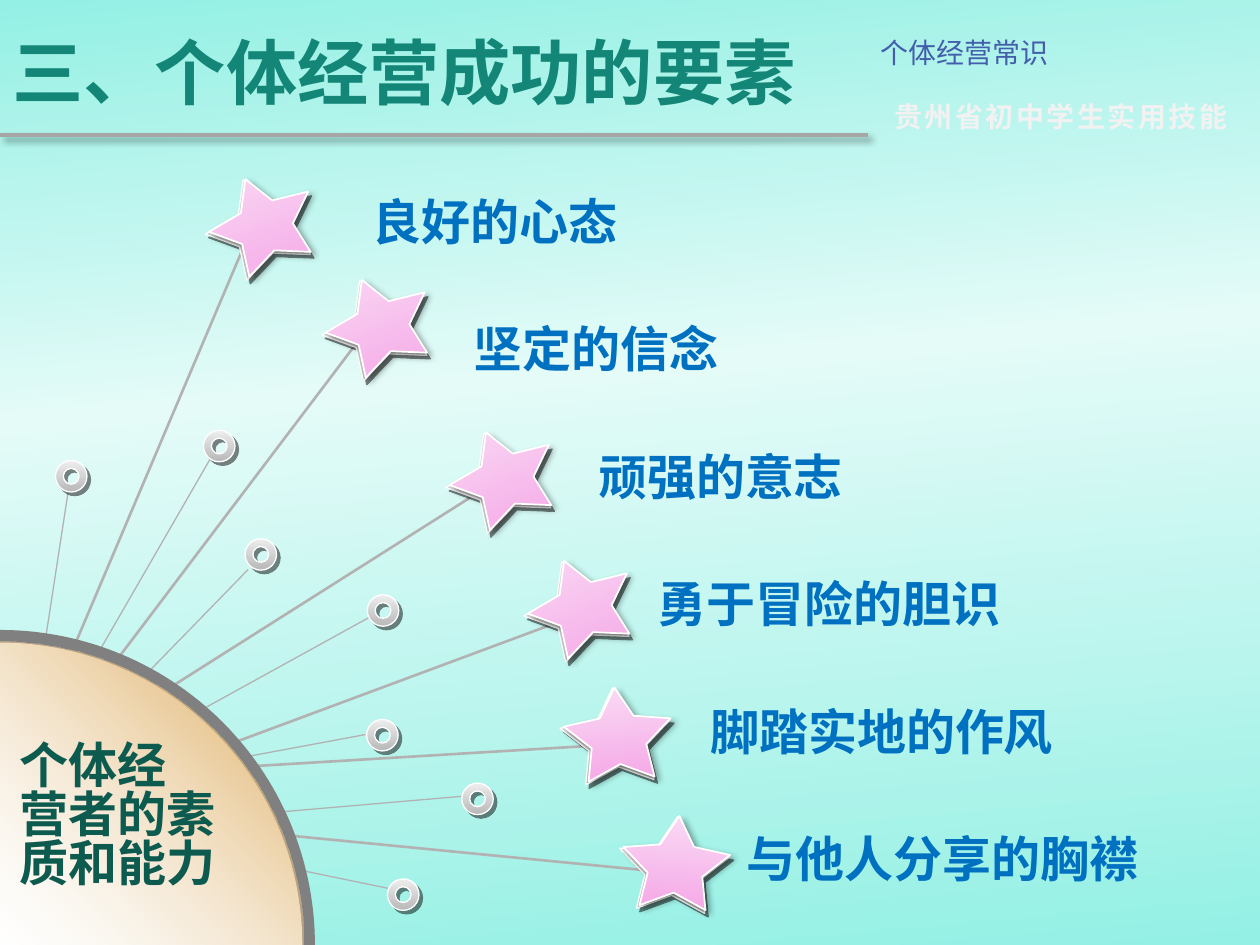
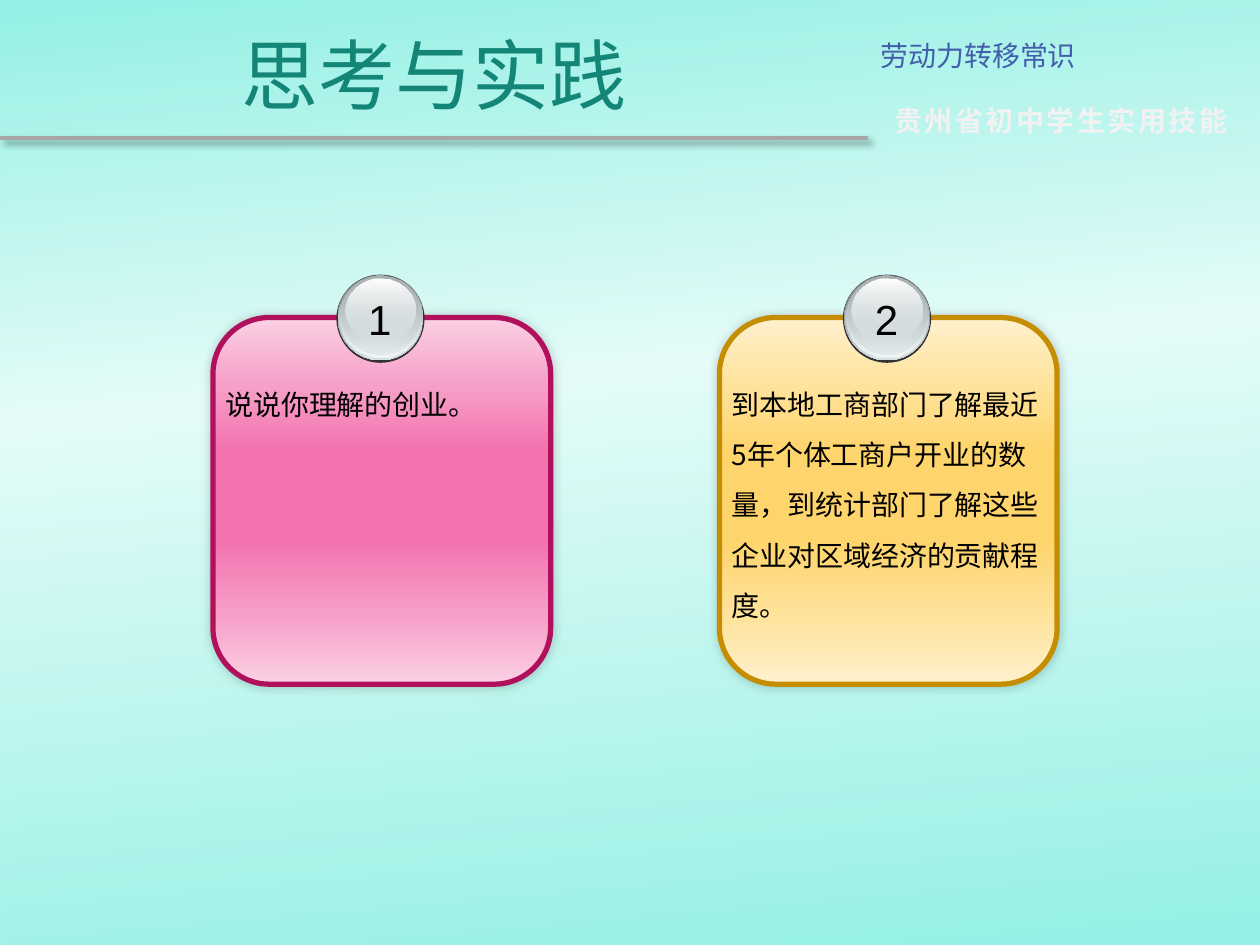
"""Two slides on running a small business, laid out on a grid of 100 by 75 cells."""
from math import cos, pi, sin
from pptx import Presentation, util as u
from pptx.dml.color import RGBColor as Rgb
from pptx.enum import shapes, text
from pptx.oxml import parse_xml, ns

HEADS = [
    dict(topic="个体经营常识", title="三、个体经营成功的要素", size=40.7, bold=True,
         align=text.PP_ALIGN.LEFT, drop=0),
    dict(topic="劳动力转移常识", title="思考与实践", size=44, bold=False,
         align=text.PP_ALIGN.CENTER, drop=0.25),
]
BANNER = "贵州省初中学生实用技能"
HUB = ["个体经", "营者的素", "质和能力"]
TRAITS = [
    dict(name="良好的心态", left=28.6, wide=21.7, star=(20.7, 17.75), turn=-22.1,
         ray=(20.1, 17.8, 1.9, 60.7)),
    dict(name="坚定的信念", left=36.6, wide=21.8, star=(29.95, 25.75), turn=-22.1,
         ray=(28.4, 27.1, 5.7, 57.1)),
    dict(name="顽强的意志", left=46.5, wide=21.7, star=(39.8, 37.85), turn=-22.1,
         ray=(37.3, 39.5, 9.5, 57.1)),
    dict(name="勇于冒险的胆识", left=51.2, wide=29.6, star=(46, 48.05), turn=-22.1,
         ray=(47.2, 48.3, 11.4, 61.6)),
    dict(name="脚踏实地的作风", left=55.4, wide=29.6, star=(48.9, 58.35), turn=-4.5,
         ray=(50.1, 59, 11.9, 61.3)),
    dict(name="与他人分享的胸襟", left=58.3, wide=33.6, star=(53.5, 68.55), turn=4.3,
         ray=(54.6, 69.4, 16.6, 65.7)),
]
RINGS = [
    ((5.65, 37.8), (5.4, 39.1, 1.8, 62.5)),
    ((17.4, 35.4), (16.7, 36.4, 1, 63.6)),
    ((20.7, 44), (19.7, 45.2, 1, 64.4)),
    ((30.4, 48.45), (29.3, 49, 1, 64.6)),
    ((30.35, 58.35), (29, 58.3, 1, 63.5)),
    ((37.9, 63.4), (36.7, 63.2, 7.6, 65.7)),
    ((32, 71), (30.8, 70.5, 2.2, 64.6)),
]

SANS, LATIN = "Noto Sans CJK SC", "Arial"
TEAL, DEEP = Rgb(0x13, 0x86, 0x77), Rgb(0x0D, 0x5A, 0x4F)
INDIGO, BLUE = Rgb(0x43, 0x5E, 0xAA), Rgb(0, 0x70, 0xC0)
BLACK, WHITE = Rgb(0, 0, 0), Rgb(255, 255, 255)
PALE, COAL = Rgb(0xF2, 0xF2, 0xF2), Rgb(8, 8, 8)
RULE, RAY = Rgb(0xA6, 0xA6, 0xA6), Rgb(0xB2, 0xB2, 0xB2)
RIM, DARK = Rgb(128, 128, 128), Rgb(0x33, 0x33, 0x33)
AQUA, MIST = Rgb(0x94, 0xF0, 0xE4), Rgb(0xE4, 0xFB, 0xF8)
SILVER, ASH = Rgb(0xEE, 0xEE, 0xEE), Rgb(0xB8, 0xB8, 0xB8)
BLUSH, PINK = Rgb(0xFB, 0xDD, 0xF5), Rgb(0xF4, 0xA6, 0xE6)
SAND, OCHRE = Rgb(0xF0, 0xE1, 0xC6), Rgb(0xDD, 0xA4, 0x4F)
SLATE, STEEL = Rgb(0x63, 0x68, 0x69), Rgb(0xAA, 0xB2, 0xB3)
ICE, FROST = Rgb(0xD6, 0xE1, 0xE2), Rgb(0xF1, 0xF5, 0xF5)
ROSE = [Rgb(0xFB, 0xD0, 0xE4), Rgb(0xF7, 0xA1, 0xCA), Rgb(0xF2, 0x73, 0xAF)]
GOLD = [Rgb(0xFF, 0xF1, 0xCE), Rgb(0xFF, 0xE3, 0x9D), Rgb(0xFE, 0xD4, 0x6C)]
WINE, AMBER = Rgb(0xB0, 0x10, 0x5C), Rgb(0xC5, 0x8D, 0x01)

METAL = [(0, SILVER), (100, ASH)]
CANDY = [(0, BLUSH), (100, PINK)]
HARD = (COAL, 50, 0, 2.8, 45)
SOFT = (BLACK, 40, 4, 3, 45)
GLOW = (BLACK, 20, 6, 0, 315)
CARDS = [("1", "说说你理解的创业。", ROSE, WINE, 4.6),
         ("2", "到本地工商部门了解最近5年个体工商户开业的数量，到统计部门了解这些企业对区域经济的"
          "贡献程度。", GOLD, AMBER, 21.2)]
BADGE = [
    (21.8, 7, 7, DARK),
    (21.8, 6.8, 6.8, [(0, SLATE), (100, ICE)]),
    (21.8, 6.6, 6.6, [(0, ICE, 0), (100, FROST)]),
    (21.9, 6.3, 6.2, [(0, STEEL), (100, ICE, 48)]),
    (22.1, 5.6, 5, [(0, WHITE), (100, ICE, 38)]),
]

deck = Presentation()
deck.slide_width, deck.slide_height = u.Inches(10), u.Inches(7.5)
CELL = deck.slide_width / 100


def grid(*vals):
    return [round(v * CELL) for v in vals]


def tint(col, alpha=100):
    return f'<a:srgbClr val="{col}"><a:alpha val="{alpha * 1000}"/></a:srgbClr>'


def blend(fill, props, stops, ang=90):
    fill.solid()
    marks = "".join(f'<a:gs pos="{pos * 1000}">{tint(*col)}</a:gs>' for pos, *col in stops)
    props.replace(props.find(ns.qn("a:solidFill")), parse_xml(
        f'<a:gradFill {ns.nsdecls("a")} rotWithShape="1"><a:gsLst>{marks}</a:gsLst>'
        f'<a:lin ang="{ang * 60000}" scaled="0"/></a:gradFill>'))


def shade(item, cast=None):
    body = ""
    if cast:
        col, alpha, blur, dist, ang = cast
        body = (f'<a:outerShdw blurRad="{u.Pt(blur)}" dist="{u.Pt(dist)}" dir="{ang * 60000}" '
                f'algn="ctr" rotWithShape="0">{tint(col, alpha)}</a:outerShdw>')
    item._element.spPr.append(
        parse_xml(f'<a:effectLst {ns.nsdecls("a")}>{body}</a:effectLst>'))


def paint(item, fill, line=None, cast=None, ang=90):
    if isinstance(fill, list):
        blend(item.fill, item._element.spPr, fill, ang)
    else:
        item.fill.solid()
        item.fill.fore_color.rgb = fill
    if line:
        item.line.color.rgb, item.line.width = line[0], u.Pt(line[1])
    else:
        item.line.fill.background()
    shade(item, cast)


def shape(page, kind, mid, size, fill, line=None, cast=None, turn=0):
    (x, y), (w, h) = mid, size
    item = page.shapes.add_shape(kind, *grid(x - w / 2, y - h / 2, w, h))
    item.rotation = turn
    paint(item, fill, line, cast)
    return item


def star(page, mid, size, turn, fill, line, cast):
    item = shape(page, shapes.MSO_SHAPE.STAR_5_POINT, mid, size, fill, line, cast, turn)
    for i, adj in enumerate((0.256, 1.051, 1.106)):
        item.adjustments[i] = adj


def rod(page, ends, col, width, cast=None):
    item = page.shapes.add_connector(shapes.MSO_CONNECTOR.STRAIGHT, *grid(*ends))
    item.line.color.rgb, item.line.width = col, u.Pt(width)
    shade(item, cast)


def write(frame, lines, col, size, bold=False, font=SANS, track=0, **form):
    for i, line in enumerate(lines):
        para = frame.paragraphs[0] if i == 0 else frame.add_paragraph()
        for key, val in form.items():
            if i or key != "space_before":
                setattr(para, key, val)
        run = para.add_run()
        run.text = line
        for key, val in dict(size=u.Pt(size), bold=bold, name=font).items():
            setattr(run.font, key, val)
        run.font.color.rgb = col
        props = run.font._element
        props.append(parse_xml(f'<a:ea {ns.nsdecls("a")} typeface="{font}"/>'))
        if track:
            props.set("spc", str(track))


def label(page, box, lines, *look, wrap=True, **form):
    frame = page.shapes.add_textbox(*grid(*box)).text_frame
    frame.word_wrap = wrap
    write(frame, lines, *look, **form)


def start(topic, title, size, bold, align, drop):
    page = deck.slides.add_slide(deck.slide_layouts[5])
    head = page.shapes.title
    head.left, head.top, head.width, head.height = grid(0, 0.5 + drop, 68.9, 10.2)
    head.text_frame.vertical_anchor = text.MSO_ANCHOR.MIDDLE
    write(head.text_frame, [title], TEAL, size, bold, alignment=align)
    label(page, (68.9, 2.3 + drop, 31.1, 3.7), [topic], INDIGO, 16,
          alignment=text.PP_ALIGN.JUSTIFY)
    label(page, (70, 7.45 + drop, 29, 3.7), [BANNER], PALE, 16, True, wrap=False, track=150)
    rod(page, (0, 10.7 + drop, 68.9, 10.7 + drop), RULE, 2.25, SOFT)
    return page


def wedge(page, rad, fill):
    arc = [grid(rad * sin(i * pi / 120), 75 - rad * cos(i * pi / 120)) for i in range(61)]
    pen = page.shapes.build_freeform(*grid(0, 75))
    pen.add_line_segments(arc, close=True)
    paint(pen.convert_to_shape(), fill, ang=315)


def fan(page):
    for mid, ray in RINGS:
        rod(page, ray, RAY, 0.75)
        shape(page, shapes.MSO_SHAPE.DONUT, mid, (2.5, 2.5), METAL, (WHITE, 0.75), HARD)
    for trait in TRAITS:
        rod(page, trait["ray"], RAY, 1.5)
        star(page, trait["star"], (8.8, 7.5), trait["turn"], METAL, (WHITE, 0.75), HARD)
    for rad, fill in ((25, RIM), (24, WHITE), (24.1, [(0, SAND, 0), (100, OCHRE)])):
        wedge(page, rad, fill)
    label(page, (0.6, 60.5, 23.4, 11.8), HUB, DEEP, 28, True,
          line_spacing=u.Pt(14), space_before=u.Pt(14))
    for row, trait in enumerate(TRAITS):
        x, y = trait["star"]
        star(page, (x + 0.15, y - 0.15), (8.5, 7.3), trait["turn"], CANDY, (WHITE, 1), SOFT)
        label(page, (trait["left"], 14.7 + 10.12 * row, trait["wide"], 5.7),
              [trait["name"]], BLUE, 28, True, wrap=False)


def cards(page):
    for col, (num, task, hues, edge, tall) in enumerate(CARDS):
        left = 16.9 + 40.2 * col
        light, mid, full = hues
        stops = list(zip((0, 18, 36, 61, 82, 100), (light, mid, full, full, mid, light)))
        shape(page, shapes.MSO_SHAPE.ROUNDED_RECTANGLE, (left + 13.4, 39.75), (26.8, 29.1),
              stops, (edge, 3), GLOW)
        for top, wide, high, fill in BADGE:
            shape(page, shapes.MSO_SHAPE.OVAL, (left + 13.3, top + high / 2), (wide, high), fill)
        label(page, (left + 11.3, 22.8, 3.9, 5), [num], BLACK, 24, False, LATIN,
              wrap=False, alignment=text.PP_ALIGN.CENTER)
        label(page, (left, 28.9, 26.8, tall), [task], BLACK, 16, line_spacing=1.5)


def main():
    back = deck.slide_master.background.fill
    back.solid()
    props = deck.slide_master._element.find(".//" + ns.qn("p:bgPr"))
    blend(back, props, [(0, AQUA), (40, MIST), (100, AQUA)], 85)
    for head, draw in zip(HEADS, (fan, cards)):
        draw(start(**head))
    deck.save("out.pptx")


if __name__ == "__main__":
    main()
